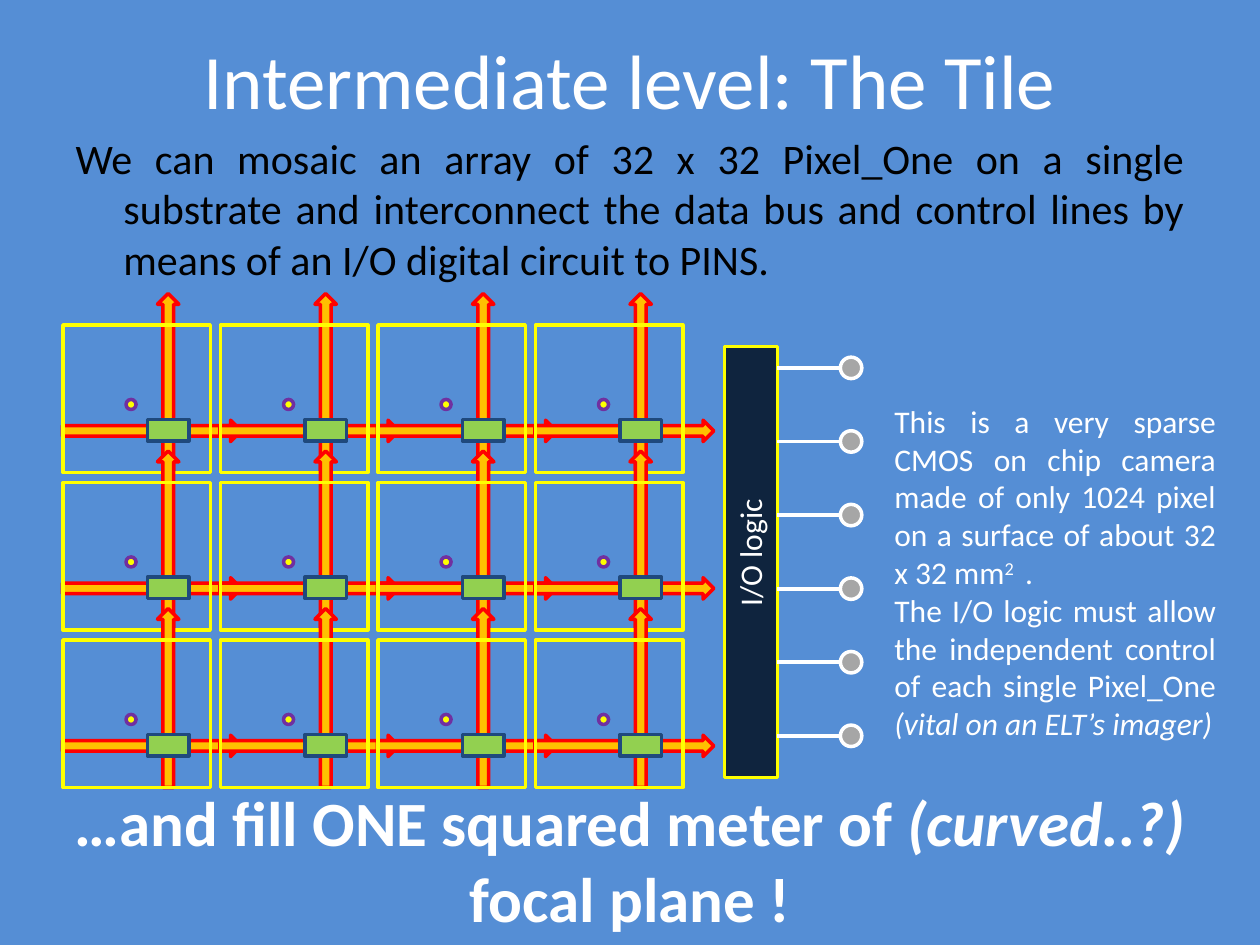
from dataclasses import dataclass

from lxml import etree
from pptx import Presentation
from pptx import util as u
from pptx.dml.color import RGBColor
from pptx.enum import shapes, text
from pptx.oxml import ns

Inches = u.Inches
SHAPE = shapes.MSO_SHAPE
ALIGN = text.PP_ALIGN


@dataclass(frozen=True)
class Theme:
    """Colours, font and sizes of the slide."""
    font: str = "Calibri"
    background: str = "558ED5"
    light: str = "FFFFFF"
    dark: str = "000000"
    outline: str = "FFFF00"
    bus: str = "FFC000"
    bus_edge: str = "FF0000"
    sensor_edge: str = "7030A0"
    circuit: str = "92D050"
    circuit_edge: str = "1F497D"
    logic: str = "0F243E"
    pin: str = "A6A6A6"
    title_size: int = 44
    closing_size: int = 36
    body_size: int = 24
    note_size: int = 18
    line_width: float = 2
    wire_width: float = 2.25


THEME = Theme()


def rgb(value):
    """Turn a hex string into a colour."""
    return RGBColor.from_string(value)


def place(shape, box):
    """Move a shape to a box given in inches."""
    shape.left, shape.top, shape.width, shape.height = map(Inches, box)


def add_part(slide, kind, box, fill, edge):
    """Add a flat preset shape; a fill of None leaves it hollow."""
    shape = slide.shapes.add_shape(kind, *map(Inches, box))
    shape.shadow.inherit = False
    if fill:
        shape.fill.solid()
        shape.fill.fore_color.rgb = rgb(fill)
    else:
        shape.fill.background()
    shape.line.color.rgb = rgb(edge)
    shape.line.width = u.Pt(THEME.line_width)
    return shape


def add_wire(slide, left, right, y):
    """Add a horizontal wire without a shadow."""
    wire = slide.shapes.add_connector(
        shapes.MSO_CONNECTOR.STRAIGHT, Inches(right), Inches(y), Inches(left), Inches(y))
    wire.line.color.rgb = rgb(THEME.light)
    wire.line.width = u.Pt(THEME.wire_width)
    etree.SubElement(wire._element.spPr, ns.qn("a:effectLst"))


def style_text(text_frame, size, color, align, bold=None):
    """Format every paragraph and run of a text frame."""
    for paragraph in text_frame.paragraphs:
        paragraph.alignment = align
        for run in paragraph.runs:
            run.font.name = THEME.font
            run.font.size = u.Pt(size)
            run.font.color.rgb = rgb(color)
            run.font.bold = bold


def add_runs(paragraph, *wordings):
    """Add one run for each wording and return the runs."""
    runs = []
    for wording in wordings:
        run = paragraph.add_run()
        run.text = wording
        runs.append(run)
    return runs


def add_text_box(slide, box):
    """Add a wrapping text box and return its text frame."""
    text_frame = slide.shapes.add_textbox(*map(Inches, box)).text_frame
    text_frame.word_wrap = True
    return text_frame


def fill_title(slide, box):
    """Write the slide title."""
    title = slide.shapes.title
    place(title, box)
    title.text_frame.text = "Intermediate level: The Tile"
    style_text(title.text_frame, THEME.title_size, THEME.light, ALIGN.CENTER)


def fill_body(slide, box):
    """Write the introduction with a hanging indent and no bullet."""
    body = slide.placeholders[1]
    place(body, box)
    body.text_frame.text = (
        "We can mosaic an array of 32 x 32 Pixel_One on a single substrate and "
        "interconnect the data bus and control lines by means of an I/O digital "
        "circuit to PINS.")
    style_text(body.text_frame, THEME.body_size, THEME.dark, ALIGN.JUSTIFY)
    properties = body.text_frame.paragraphs[0]._p.get_or_add_pPr()
    properties.set("marL", str(Inches(0.38)))
    properties.set("indent", str(Inches(-0.38)))
    etree.SubElement(properties, ns.qn("a:buNone"))


def add_pixel(slide, box):
    """Draw one pixel: two bus arrows, frame, sensor and circuit."""
    left, top, width, height = box
    bus_width, bus_length = 0.17, 1.42
    row_bus = add_part(slide, SHAPE.UP_ARROW,
                       (left + 0.62, top + 0.13, bus_width, bus_length),
                       THEME.bus, THEME.bus_edge)
    row_bus.rotation = 90
    add_part(slide, SHAPE.UP_ARROW, (left + 0.75, top - 0.25, bus_width, bus_length),
             THEME.bus, THEME.bus_edge)
    add_part(slide, SHAPE.RECTANGLE, (left, top, width, height), None, THEME.outline)
    add_part(slide, SHAPE.OVAL, (left + 0.5, top + 0.59, 0.08, 0.08),
             THEME.outline, THEME.sensor_edge)
    add_part(slide, SHAPE.RECTANGLE, (left + 0.67, top + 0.75, 0.33, 0.17),
             THEME.circuit, THEME.circuit_edge)


def add_pixel_array(slide, box, rows=3, columns=4, gap=0.08):
    """Fill a box with a grid of pixels."""
    left, top, width, height = box
    cell_width = (width - gap * (columns - 1)) / columns
    cell_height = (height - gap * (rows - 1)) / rows
    for row in range(rows):
        for column in range(columns):
            add_pixel(slide, (left + column * (cell_width + gap),
                              top + row * (cell_height + gap), cell_width, cell_height))


def add_io_logic(slide, box, pins=6):
    """Draw the logic block, its upright label and its row of pins."""
    left, top, width, height = box
    right, pin_left, pin_size = left + width, left + 0.92, 0.17
    add_part(slide, SHAPE.RECTANGLE, box, THEME.logic, THEME.outline)
    pitch = (height - 0.5) / (pins - 1)
    for index in range(pins):
        y = top + 0.17 + index * pitch
        add_part(slide, SHAPE.OVAL, (pin_left, y - pin_size / 2, pin_size, pin_size),
                 THEME.pin, THEME.light)
        add_wire(slide, right, pin_left, y)
    label = slide.shapes.add_textbox(
        *map(Inches, (left - 0.33, top + 1.43, 1.06, 0.4)))
    label.rotation = 270
    label.text_frame.word_wrap = False
    label.text_frame.text = "I/O logic"
    style_text(label.text_frame, THEME.note_size, THEME.light, ALIGN.LEFT)


def add_note(slide, box):
    """Write the remarks beside the pins."""
    text_frame = add_text_box(slide, box)
    runs = add_runs(
        text_frame.paragraphs[0],
        "This is a very sparse CMOS on chip camera made of only 1024 pixel "
        "on a surface of about 32 x 32 mm", "2 ", " .")
    runs[1].font._element.set("baseline", "30000")
    runs = add_runs(
        text_frame.add_paragraph(),
        "The I/O logic must allow the independent control of each single Pixel_One ",
        "(vital on an ELT’s imager)")
    runs[1].font.italic = True
    style_text(text_frame, THEME.note_size, THEME.light, ALIGN.JUSTIFY)


def add_closing(slide, box):
    """Write the closing statement."""
    text_frame = add_text_box(slide, box)
    runs = add_runs(text_frame.paragraphs[0], "…and fill ONE squared meter of ",
                    "(curved..?) ", "focal plane !")
    runs[1].font.italic = True
    style_text(text_frame, THEME.closing_size, THEME.light, ALIGN.CENTER, bold=True)


def main():
    """Build the slide and save it."""
    presentation = Presentation()
    presentation.slide_width, presentation.slide_height = Inches(10), Inches(7.5)
    slide = presentation.slides.add_slide(presentation.slide_layouts[1])
    slide.background.fill.solid()
    slide.background.fill.fore_color.rgb = rgb(THEME.background)
    fill_title(slide, (0.5, 0, 9, 1.25))
    fill_body(slide, (0.5, 1, 9, 4.95))
    add_pixel_array(slide, (0.5, 2.58, 4.92, 3.67))
    add_io_logic(slide, (5.75, 2.75, 0.42, 3.42))
    add_note(slide, (7, 3.14, 2.75, 2.83))
    add_closing(slide, (0, 6.17, 10, 1.31))
    presentation.save("out.pptx")


if __name__ == "__main__":
    main()
